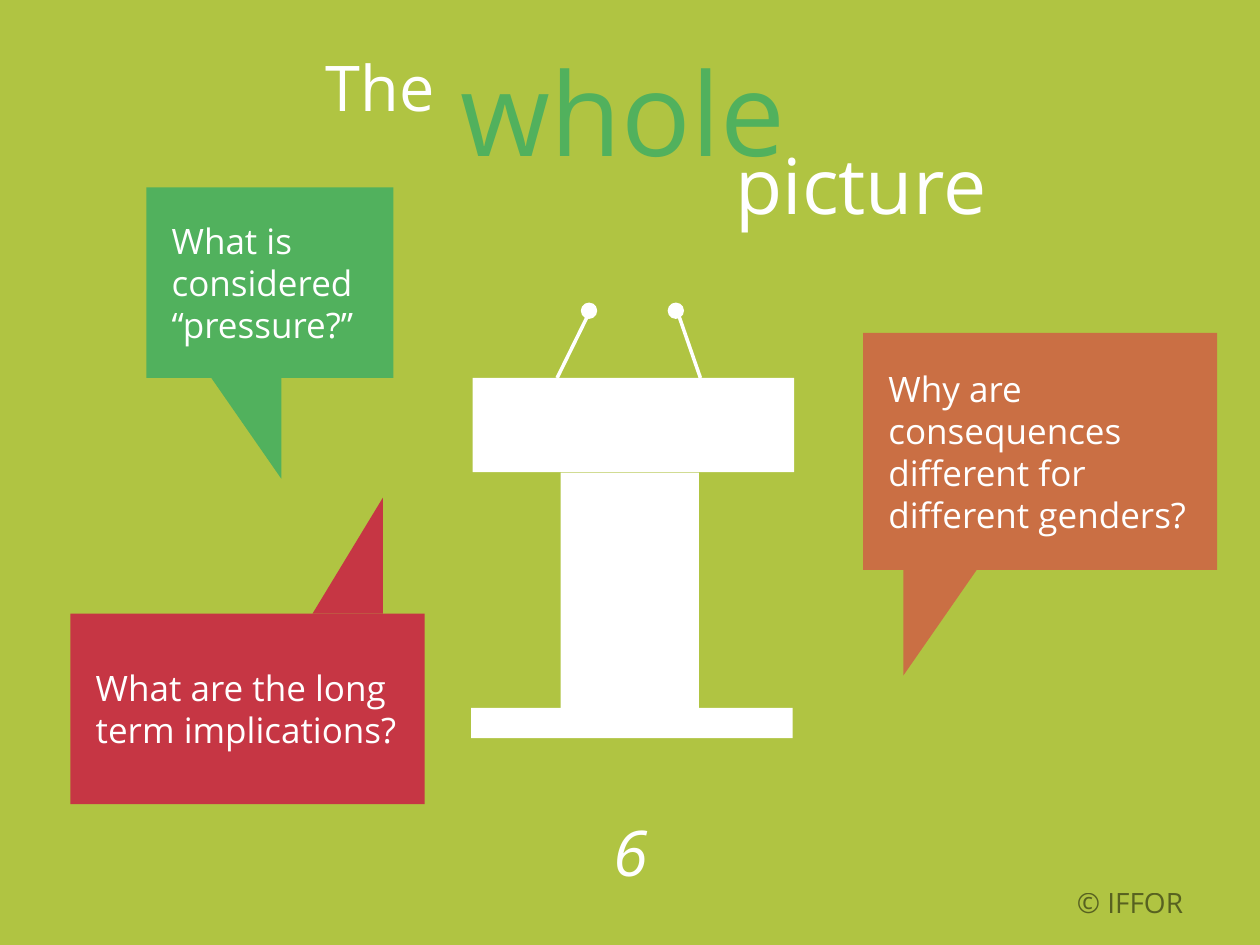
import pptx
import pptx.util
import pptx.dml.color
import pptx.enum.shapes
import pptx.enum.text
import pptx.oxml.ns
from dataclasses import dataclass
from lxml import etree
from pptx.util import Cm

SHAPES = pptx.enum.shapes.MSO_SHAPE
ALIGN = pptx.enum.text.PP_ALIGN
ANCHOR = pptx.enum.text.MSO_ANCHOR


@dataclass(frozen=True)
class Theme:
    font: str = "Open Sans"
    background: str = "B0C442"
    white: str = "FFFFFF"
    black: str = "000000"
    green: str = "51B15D"
    orange: str = "CA6F44"
    red: str = "C63644"
    copyright_size: int = 16
    bubble_size: int = 20
    small_title_size: int = 36
    medium_title_size: int = 44
    large_title_size: int = 66


THEME = Theme()


def rgb(color):
    return pptx.dml.color.RGBColor.from_string(color)


def write_text(shape, text, *, size, color=THEME.white, italic=False, align=ALIGN.LEFT,
               anchor=ANCHOR.TOP, wrap=True, margins=(0.25, 0.13)):
    """Fill a shape with one formatted paragraph; margins are horizontal, vertical in cm."""
    frame = shape.text_frame
    frame.word_wrap = wrap
    frame.auto_size = pptx.enum.text.MSO_AUTO_SIZE.NONE
    frame.vertical_anchor = anchor
    frame.margin_left = frame.margin_right = Cm(margins[0])
    frame.margin_top = frame.margin_bottom = Cm(margins[1])
    paragraph = frame.paragraphs[0]
    paragraph.alignment = align
    paragraph.line_spacing = 1.0
    run = paragraph.add_run()
    run.text = text
    run.font.name = THEME.font
    run.font.size = pptx.util.Pt(size)
    run.font.italic = italic
    run.font.color.rgb = rgb(color)
    return run


def add_label(slide, text, left, top, width, height, **text_format):
    box = slide.shapes.add_textbox(Cm(left), Cm(top), Cm(width), Cm(height))
    return write_text(box, text, **text_format)


def add_block(slide, kind, left, top, width, height, color):
    shape = slide.shapes.add_shape(kind, Cm(left), Cm(top), Cm(width), Cm(height))
    shape.shadow.inherit = False
    shape.fill.solid()
    shape.fill.fore_color.rgb = rgb(color)
    shape.line.fill.background()
    return shape


def add_bubble(slide, text, color, body, tail, flip=None):
    """Draw a speech bubble: a rectangle with text and a triangular tail."""
    rectangle = add_block(slide, SHAPES.RECTANGLE, *body, color)
    write_text(rectangle, text, size=THEME.bubble_size, anchor=ANCHOR.MIDDLE, margins=(0.51, 0.51))
    triangle = add_block(slide, SHAPES.RIGHT_TRIANGLE, *tail, color)
    triangle.rotation = 180
    if flip:
        triangle.element.spPr.xfrm.set(flip, "1")


def add_microphone(slide, foot_x, foot_y, tip_x, tip_y, head_left):
    stem = slide.shapes.add_connector(pptx.enum.shapes.MSO_CONNECTOR.STRAIGHT,
                                      Cm(foot_x), Cm(foot_y), Cm(tip_x), Cm(tip_y))
    stem.line.color.rgb = rgb(THEME.white)
    stem.line.width = pptx.util.Pt(2)
    etree.SubElement(stem.element.spPr, pptx.oxml.ns.qn("a:effectLst"))
    add_block(slide, SHAPES.OVAL, head_left, 6.1, 0.33, 0.33, THEME.white)


def add_heading(slide):
    title = slide.shapes.title
    title.left, title.top, title.width, title.height = Cm(9.04), Cm(0.69), Cm(7.24), Cm(3.07)
    write_text(title, "whole", size=THEME.large_title_size, color=THEME.green)
    add_label(slide, "The", 6.32, 0.84, 3.25, 1.47, size=THEME.small_title_size)
    add_label(slide, "picture", 14.58, 2.64, 5.61, 2.13, size=THEME.medium_title_size, wrap=False)


def add_lectern(slide):
    base = (9.5, 14.27, 6.48, 0.61)
    post = (11.3, 9.53, 2.79, 4.77)
    desk = (9.53, 7.62, 6.48, 1.9)
    for part in (base, post, desk):
        add_block(slide, SHAPES.RECTANGLE, *part, THEME.white)
    add_microphone(slide, 14.12, 7.62, 13.69, 6.38, head_left=13.46)
    add_microphone(slide, 11.23, 7.62, 11.84, 6.38, head_left=11.71)


def add_questions(slide):
    add_bubble(slide, "What is considered “pressure?”", THEME.green,
               body=(2.95, 3.78, 4.98, 3.84), tail=(4.17, 7.49, 1.5, 2.16))
    add_bubble(slide, "Why are consequences different for different genders?", THEME.orange,
               body=(17.4, 6.71, 7.14, 4.78), tail=(18.21, 11.46, 1.5, 2.16), flip="flipH")
    add_bubble(slide, "What are the long term implications?", THEME.red,
               body=(1.42, 12.37, 7.14, 3.84), tail=(6.3, 10.03, 1.42, 2.34), flip="flipV")


def add_footer(slide):
    add_label(slide, "6", 11.91, 16.28, 1.6, 1.8, size=THEME.small_title_size,
              italic=True, align=ALIGN.CENTER, wrap=False)
    notice = add_label(slide, "© IFFOR", 17.75, 17.7, 6.38, 0.97, size=THEME.copyright_size,
                       color=THEME.black, align=ALIGN.RIGHT, margins=(0.28, 0.15))
    # Half-transparent copyright text
    color = notice.font._element.find(".//" + pptx.oxml.ns.qn("a:srgbClr"))
    etree.SubElement(color, pptx.oxml.ns.qn("a:alpha"), val="50000")


def main():
    presentation = pptx.Presentation()
    presentation.slide_width, presentation.slide_height = Cm(25.4), Cm(19.05)
    slide = presentation.slides.add_slide(presentation.slide_layouts[5])
    slide.background.fill.solid()
    slide.background.fill.fore_color.rgb = rgb(THEME.background)

    add_heading(slide)
    add_lectern(slide)
    add_questions(slide)
    add_footer(slide)
    presentation.save("out.pptx")


if __name__ == "__main__":
    main()
